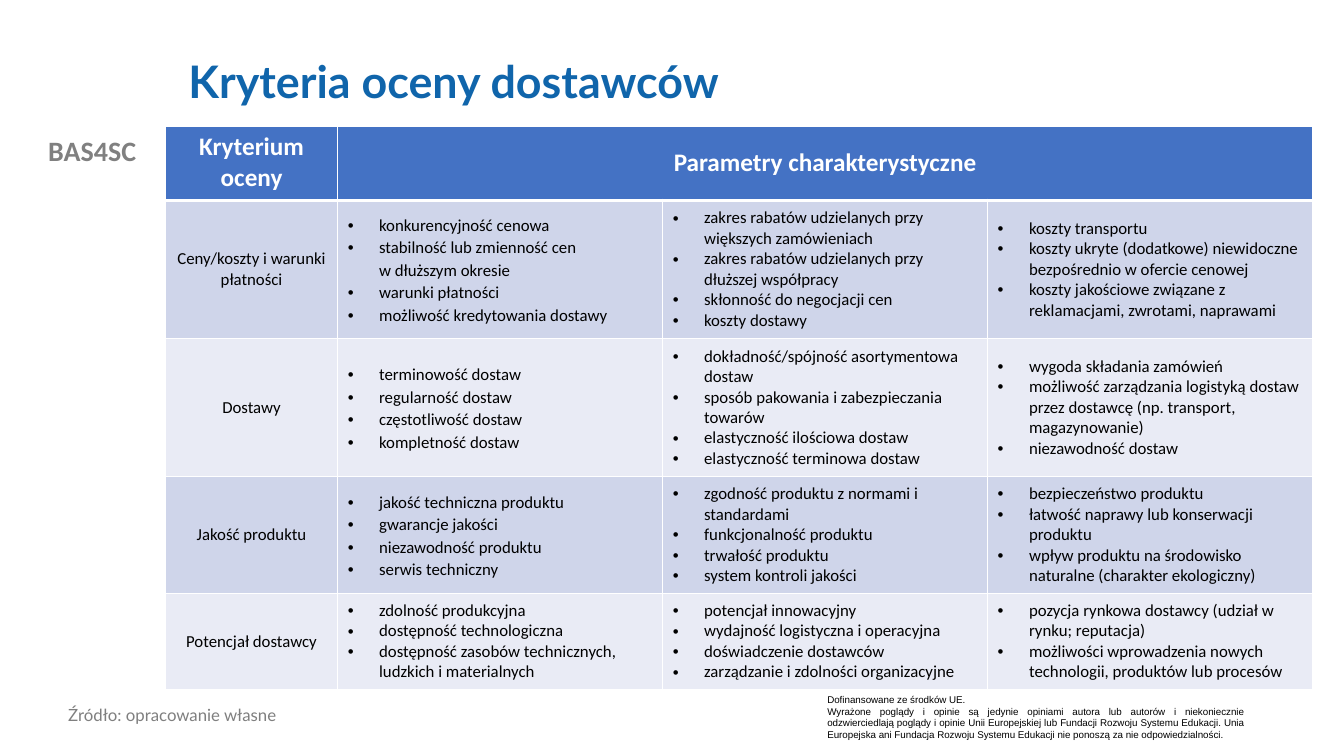
"""Builds a slide with a table of supplier evaluation criteria."""
import pptx
import pptx.dml.color
import pptx.enum.text
import pptx.oxml.ns
import pptx.util
from lxml import etree

Cm, Pt = pptx.util.Cm, pptx.util.Pt
ALIGN, ANCHOR = pptx.enum.text.PP_ALIGN, pptx.enum.text.MSO_ANCHOR

COLORS = {
    "title": "1065AB", "project": "808080", "source": "7F7F7F", "text": "000000",
    "white": "FFFFFF", "header": "4472C4", "odd": "CFD5EA", "even": "E9EBF5",
}

PROJECT = ["BAS4SC"]
TITLE = ["Kryteria oceny dostawców"]
SOURCE = ["Źródło: opracowanie własne"]
FUNDING = [
    "Dofinansowane ze środków UE.",
    "Wyrażone poglądy i opinie są jedynie opiniami autora lub autorów i niekoniecznie "
    "odzwierciedlają poglądy i opinie Unii Europejskiej lub Fundacji Rozwoju Systemu Edukacji. "
    "Unia Europejska ani Fundacja Rozwoju Systemu Edukacji nie ponoszą za nie odpowiedzialności.",
]
HEADERS = ["Kryterium oceny", "Parametry charakterystyczne"]
CRITERIA = [
    ("Ceny/koszty i warunki płatności", [
        ["konkurencyjność cenowa", "stabilność lub zmienność cen \nw dłuższym okresie",
         "warunki płatności", "możliwość kredytowania dostawy"],
        ["zakres rabatów udzielanych przy większych zamówieniach",
         "zakres rabatów udzielanych przy dłuższej współpracy",
         "skłonność do negocjacji cen", "koszty dostawy"],
        ["koszty transportu",
         "koszty ukryte (dodatkowe) niewidoczne bezpośrednio w ofercie cenowej",
         "koszty jakościowe związane z reklamacjami, zwrotami, naprawami"],
    ]),
    ("Dostawy", [
        ["terminowość dostaw", "regularność dostaw", "częstotliwość dostaw",
         "kompletność dostaw"],
        ["dokładność/spójność asortymentowa dostaw",
         "sposób pakowania i zabezpieczania towarów",
         "elastyczność ilościowa dostaw", "elastyczność terminowa dostaw"],
        ["wygoda składania zamówień",
         "możliwość zarządzania logistyką dostaw przez dostawcę (np. transport, magazynowanie)",
         "niezawodność dostaw"],
    ]),
    ("Jakość produktu", [
        ["jakość techniczna produktu", "gwarancje jakości", "niezawodność produktu",
         "serwis techniczny"],
        ["zgodność produktu z normami i standardami", "funkcjonalność produktu",
         "trwałość produktu", "system kontroli jakości"],
        ["bezpieczeństwo produktu", "łatwość naprawy lub konserwacji produktu",
         "wpływ produktu na środowisko naturalne (charakter ekologiczny)"],
    ]),
    ("Potencjał dostawcy", [
        ["zdolność produkcyjna", "dostępność technologiczna",
         "dostępność zasobów technicznych, ludzkich i materialnych"],
        ["potencjał innowacyjny", "wydajność logistyczna i operacyjna",
         "doświadczenie dostawców", "zarządzanie i zdolności organizacyjne"],
        ["pozycja rynkowa dostawcy (udział w rynku; reputacja)",
         "możliwości wprowadzenia nowych technologii, produktów lub procesów"],
    ]),
]
COL_WIDTHS = [4.34, 8.19, 8.19, 8.19]
ROW_HEIGHTS = [1.87, 3.48, 3.48, 2.95, 2.41]
TABLE_LEFT, TABLE_TOP = 4.17, 3.18
BULLET_INDENT = 0.79


def rgb(name):
    return pptx.dml.color.RGBColor.from_string(COLORS[name])


def add_bullet(p):
    pPr = p._p.get_or_add_pPr()
    pPr.set("marL", str(Cm(BULLET_INDENT)))
    pPr.set("indent", str(-Cm(BULLET_INDENT)))
    etree.SubElement(pPr, pptx.oxml.ns.qn("a:buFont")).set("typeface", "Arial")
    etree.SubElement(pPr, pptx.oxml.ns.qn("a:buChar")).set("char", "•")


def write(tf, paragraphs, size, color, font="Calibri", bold=False, align=ALIGN.LEFT,
          spacing=1.0, bullet=False):
    for i, text in enumerate(paragraphs):
        p = tf.paragraphs[0] if i == 0 else tf.add_paragraph()
        if bullet:
            add_bullet(p)
        p.alignment, p.line_spacing = align, spacing
        for j, line in enumerate(text.split("\n")):
            if j:
                p.add_line_break()
            r = p.add_run()
            r.text = line
            r.font.name, r.font.size, r.font.bold = font, Pt(size), bold
            r.font.color.rgb = rgb(color)


def add_text(s, box, paragraphs, size, color, anchor=ANCHOR.TOP, **style):
    tf = s.shapes.add_textbox(*map(Cm, box)).text_frame
    tf.word_wrap, tf.vertical_anchor = True, anchor
    write(tf, paragraphs, size, color, **style)


def style_cell(cell, fill, bottom=1):
    tcPr = cell._tc.get_or_add_tcPr()
    for side, width in (("L", 1), ("R", 1), ("T", 1), ("B", bottom)):
        ln = etree.SubElement(tcPr, pptx.oxml.ns.qn(f"a:ln{side}"), w=str(Pt(width)))
        solid = etree.SubElement(ln, pptx.oxml.ns.qn("a:solidFill"))
        etree.SubElement(solid, pptx.oxml.ns.qn("a:srgbClr"), val=COLORS["white"])
    cell.fill.solid()
    cell.fill.fore_color.rgb = rgb(fill)
    cell.vertical_anchor = ANCHOR.MIDDLE


def add_criteria_table(s):
    table = s.shapes.add_table(
        len(ROW_HEIGHTS), len(COL_WIDTHS), Cm(TABLE_LEFT), Cm(TABLE_TOP),
        Cm(sum(COL_WIDTHS)), Cm(sum(ROW_HEIGHTS))).table
    table.horz_banding = False
    for column, width in zip(table.columns, COL_WIDTHS):
        column.width = Cm(width)
    for row, height in zip(table.rows, ROW_HEIGHTS):
        row.height = Cm(height)

    for c in range(len(COL_WIDTHS)):
        style_cell(table.cell(0, c), "header", bottom=3)
    table.cell(0, 0).vertical_anchor = ANCHOR.TOP
    table.cell(0, 1).merge(table.cell(0, len(COL_WIDTHS) - 1))
    for c, header in enumerate(HEADERS):
        write(table.cell(0, c).text_frame, [header], 18, "white", bold=True, align=ALIGN.CENTER)

    for i, (criterion, parameters) in enumerate(CRITERIA, 1):
        fill = "odd" if i % 2 else "even"
        style_cell(table.cell(i, 0), fill)
        write(table.cell(i, 0).text_frame, [criterion], 12, "text", align=ALIGN.CENTER)
        for c, items in enumerate(parameters, 1):
            style_cell(table.cell(i, c), fill)
            loose = c == 1 and i < len(CRITERIA)
            write(table.cell(i, c).text_frame, items, 12, "text",
                  spacing=1.1 if loose else 1.0, bullet=True)


def main():
    prs = pptx.Presentation()
    prs.slide_width, prs.slide_height = Cm(33.87), Cm(19.05)
    s = prs.slides.add_slide(prs.slide_layouts[6])
    add_text(s, (0, 3.25, 4.65, 1.12), PROJECT, 20, "project", bold=True, align=ALIGN.CENTER)
    add_text(s, (20.6, 17.35, 11, 1.45), FUNDING, 7, "text", font="Arial", align=ALIGN.JUSTIFY)
    add_text(s, (4.5, 0.56, 27.08, 3.1), TITLE, 32, "title", anchor=ANCHOR.MIDDLE,
             font="Lato", bold=True, spacing=0.9)
    add_text(s, (1.47, 17.68, 14.99, 0.89), SOURCE, 12, "source", font="Lato", spacing=0.9)
    add_criteria_table(s)
    prs.save("out.pptx")


if __name__ == "__main__":
    main()
